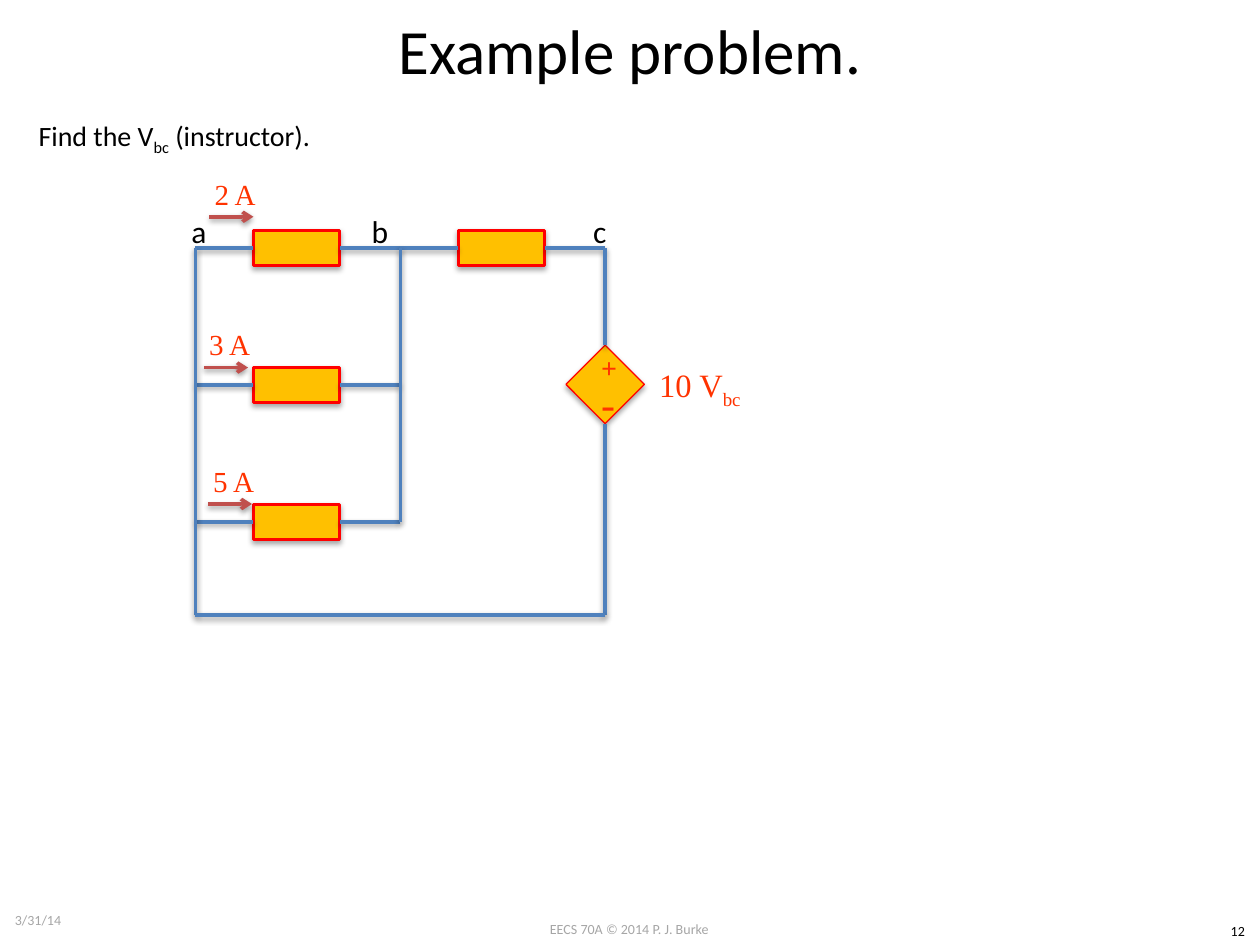
from dataclasses import dataclass

from lxml import etree
from pptx import Presentation
from pptx.dml.color import RGBColor
from pptx.enum.shapes import MSO_CONNECTOR, MSO_SHAPE
from pptx.enum.text import MSO_ANCHOR, PP_ALIGN
from pptx.oxml.ns import qn
from pptx.util import Cm, Pt

RECT = MSO_SHAPE.RECTANGLE
LINE = MSO_CONNECTOR.STRAIGHT
LEFT, MID = PP_ALIGN.LEFT, PP_ALIGN.CENTER
TOP, HALF = MSO_ANCHOR.TOP, MSO_ANCHOR.MIDDLE


@dataclass(frozen=True)
class Theme:
    sans: str = "Calibri"
    serif: str = "Times New Roman"
    black: str = "000000"
    grey: str = "A6A6A6"
    red: str = "FF3300"
    edge: str = "FF0000"
    gold: str = "FFC000"
    blue: str = "4F81BD"
    rust: str = "C0504D"
    title: float = 36
    body: float = 16
    node: float = 18
    amp: float = 16.6
    volt: float = 18.6
    minus: float = 24
    foot: float = 8


def put_text(frame, text, font, size, color, align=LEFT, anchor=TOP,
             bold=False, wrap=True):
    """Fill a text frame; parts between underscores become subscripts."""
    frame.word_wrap = wrap
    frame.vertical_anchor = anchor
    para = frame.paragraphs[0]
    para.alignment = align
    for i, part in enumerate(text.split("_")):
        if not part:
            continue
        run = para.add_run()
        run.text = part
        run.font.name = font
        run.font.size = Pt(size)
        run.font.bold = bold
        run.font.color.rgb = RGBColor.from_string(color)
        if i % 2:
            run.font._element.set("baseline", "-25000")


class Sheet:
    def __init__(self, slide, theme):
        self.slide = slide
        self.theme = theme

    def shade(self, item, dist, alpha):
        """Give a shape or line a soft shadow straight below it."""
        props = item._element.spPr
        for old in props.findall(qn("a:effectLst")):
            props.remove(old)
        list_ = etree.SubElement(props, qn("a:effectLst"))
        drop = etree.SubElement(list_, qn("a:outerShdw"), blurRad="40000",
                                dist=str(dist), dir="5400000", rotWithShape="0")
        tint = etree.SubElement(drop, qn("a:srgbClr"), val=self.theme.black)
        etree.SubElement(tint, qn("a:alpha"), val=str(alpha * 1000))

    def label(self, text, x, y, w, h, **style):
        box = self.slide.shapes.add_textbox(Cm(x), Cm(y), Cm(w), Cm(h))
        put_text(box.text_frame, text, **style)

    def block(self, x, y, w, h, width=1.5, turn=0):
        box = self.slide.shapes.add_shape(RECT, Cm(x), Cm(y), Cm(w), Cm(h))
        box.rotation = turn
        box.fill.solid()
        box.fill.fore_color.rgb = RGBColor.from_string(self.theme.gold)
        box.line.color.rgb = RGBColor.from_string(self.theme.edge)
        box.line.width = Pt(width)
        self.shade(box, 23000, 35)

    def wire(self, x1, y1, x2, y2, color=None, arrow=False):
        wire = self.slide.shapes.add_connector(
            LINE, Cm(x1), Cm(y1), Cm(x2), Cm(y2))
        wire.line.color.rgb = RGBColor.from_string(color or self.theme.blue)
        wire.line.width = Pt(2)
        if arrow:
            etree.SubElement(wire.line._get_or_add_ln(), qn("a:tailEnd"),
                             type="arrow")
        self.shade(wire, 20000, 38)

    def branch(self, x, y, span):
        """Draw a resistor with a lead on each side."""
        lead, w, h = 1.17, 1.74, 0.71
        self.block(x + lead, y - h / 2, w, h)
        self.wire(x + span, y, x + lead + w, y)
        self.wire(x + lead, y, x, y)

    def amps(self, text, x, y):
        """Draw a current arrow with its value above."""
        t = self.theme
        self.label(text, x - 0.28, y - 0.94, 1.6, 0.94, font=t.serif,
                   size=t.amp, color=t.red, align=MID, anchor=HALF)
        self.wire(x, y, x + 0.89, y, t.rust, arrow=True)


def main():
    deck = Presentation()
    deck.slide_width, deck.slide_height = Cm(25.4), Cm(19.05)
    t = Theme()
    sheet = Sheet(deck.slides.add_slide(deck.slide_layouts[6]), t)

    # Title and task
    sheet.label("Example problem.", 1.27, 0, 22.86, 1.98, font=t.sans,
                size=t.title, color=t.black, align=MID, anchor=HALF)
    sheet.label("Find the V_bc_ (instructor).", 0.53, 2.26, 6.27, 0.94,
                font=t.sans, size=t.body, color=t.black, wrap=False)

    # Circuit grid
    span, pitch = 4.13, 2.76
    a, b, c = (3.94 + i * span for i in range(3))
    rows = [5 + i * pitch for i in range(3)]
    head, base = rows[0], 12.4

    # Resistors
    for y in rows:
        sheet.branch(a, y, span)
    sheet.branch(b, head, span)

    # Dependent source
    side, half, mid = 1.12, 0.79, 7.75
    sheet.block(c - side / 2, mid - side / 2, side, side, 0.75, 45)
    for sign, y, size, bold in (("+", 6.98, t.body, True),
                                ("-", 7.7, t.minus, False)):
        sheet.label(sign, c - 0.33, y, 0.66, 0.84, font=t.serif, size=size,
                    color=t.red, align=MID, anchor=HALF, bold=bold)
    sheet.label("10 V_bc_", 12.98, 7.09, 2.26, 1.45, font=t.serif,
                size=t.volt, color=t.red, align=MID, anchor=HALF)

    # Rails
    sheet.wire(c, mid - half, c, head)
    sheet.wire(c, base, c, mid + half)
    sheet.wire(a, base, a, head)
    sheet.wire(b, rows[-1], b, head)
    sheet.wire(c, base, a, base)

    # Nodes and currents
    for name, x in (("a", 3.61), ("b", 7.24), ("c", 11.71)):
        sheet.label(name, x, 4.14, 0.81, 1.02, font=t.sans,
                    size=t.node, color=t.black)
    for text, x, y in (("2 A", 4.22, 4.37), ("3 A", 4.11, 7.41),
                       ("5 A", 4.19, 10.16)):
        sheet.amps(text, x, y)

    # Footer
    sheet.label("3/31/14", 0.05, 18.03, 5.92, 1.02, font=t.sans,
                size=t.foot, color=t.grey, anchor=HALF)
    sheet.label("EECS 70A © 2014 P. J. Burke", 9.73, 18.44, 5.92, 0.61,
                font=t.sans, size=t.foot, color=t.grey, align=MID)
    sheet.label("12", 24.51, 18.47, 0.89, 0.61, font=t.sans,
                size=t.foot, color=t.black, align=MID)

    deck.save("out.pptx")


if __name__ == "__main__":
    main()
